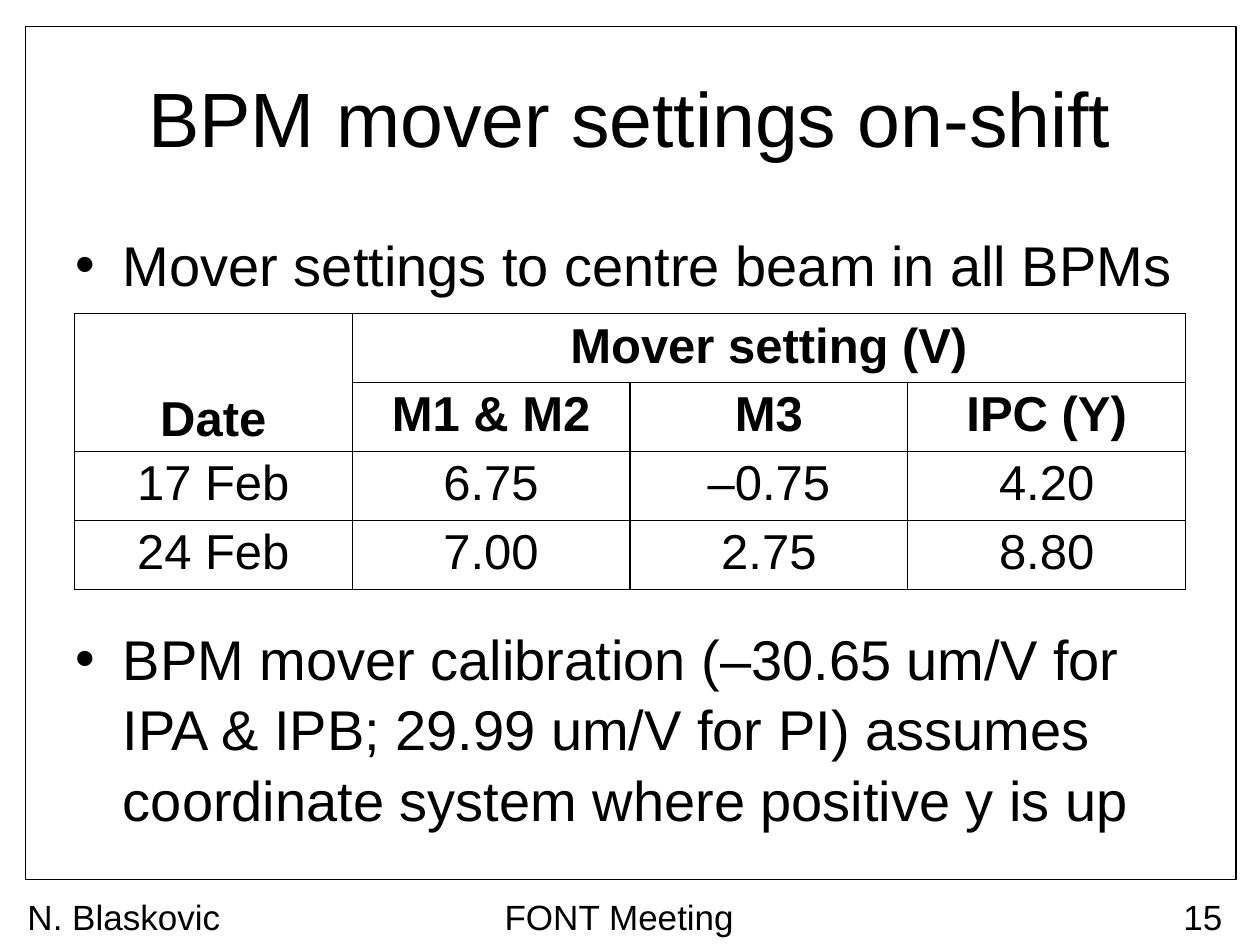
from lxml import etree
from pptx import Presentation
from pptx import util as u
from pptx.dml.color import RGBColor
from pptx.enum import shapes, text
from pptx.oxml.ns import qn

BLACK = "000000"
FONT = "Arial"
ALIGN = text.PP_ALIGN
ANCHOR = text.MSO_ANCHOR


def colour(value):
    return RGBColor.from_string(value)


def style(para, size, align=ALIGN.LEFT, bold=False):
    para.alignment = align
    para.font.name = FONT
    para.font.size = u.Pt(size)
    para.font.bold = bold
    para.font.color.rgb = colour(BLACK)


def place(shape, left, top, width, height):
    shape.left, shape.top = u.Inches(left), u.Inches(top)
    shape.width, shape.height = u.Inches(width), u.Inches(height)


def add_frame(page):
    frame = page.shapes.add_shape(
        shapes.MSO_SHAPE.RECTANGLE,
        u.Inches(0.2), u.Inches(0.21), u.Inches(9.61), u.Inches(6.77))
    frame.shadow.inherit = False
    frame.fill.background()
    frame.line.color.rgb = colour(BLACK)
    frame.line.width = u.Pt(0.75)


def fill_title(title, words):
    place(title, 0.5, 0.3, 9, 1.25)
    title.text_frame.text = words
    title.text_frame.vertical_anchor = ANCHOR.MIDDLE
    style(title.text_frame.paragraphs[0], 44, ALIGN.CENTER)


def fill_bullets(body, items):
    """Each item is its wording and the space above it in points."""
    place(body, 0.5, 1.75, 9.01, 4.95)
    frame = body.text_frame
    frame.auto_size = text.MSO_AUTO_SIZE.NONE
    frame.text = "\n".join(words for words, _ in items)
    for para, (_, gap) in zip(frame.paragraphs, items):
        style(para, 32)
        para.line_spacing = 1.05
        para.space_before = u.Pt(gap)


def add_label(page, words, left, width, align):
    box = page.shapes.add_textbox(
        u.Inches(left), u.Inches(7.06), u.Inches(width), u.Inches(0.32))
    box.text_frame.word_wrap = True
    box.text_frame.text = words
    style(box.text_frame.paragraphs[0], 20, align)


def add_borders(cell):
    properties = cell._tc.get_or_add_tcPr()
    for side in ("a:lnL", "a:lnR", "a:lnT", "a:lnB"):
        line = etree.SubElement(properties, qn(side), w=str(u.Pt(0.75)))
        solid = etree.SubElement(line, qn("a:solidFill"))
        etree.SubElement(solid, qn("a:srgbClr"), val=BLACK)


def add_settings_table(page, rows, header_rows):
    row_height = 0.53
    table = page.shapes.add_table(
        len(rows), len(rows[0]), u.Inches(0.59), u.Inches(2.49),
        u.Inches(8.82), u.Inches(row_height * len(rows))).table
    table.first_row = table.horz_banding = False
    for r, row in enumerate(rows):
        for c, words in enumerate(row):
            cell = table.cell(r, c)
            add_borders(cell)
            cell.fill.background()
            cell.margin_top = cell.margin_bottom = u.Inches(0.04)
            cell.text = words
            style(cell.text_frame.paragraphs[0], 28, ALIGN.CENTER,
                  bold=r < header_rows)
    # Date spans both header rows, the setting heading spans its columns
    table.cell(0, 0).merge(table.cell(1, 0))
    table.cell(0, 0).vertical_anchor = ANCHOR.BOTTOM
    table.cell(0, 1).merge(table.cell(0, 3))


def main():
    deck = Presentation()
    deck.slide_width, deck.slide_height = u.Inches(10), u.Inches(7.5)
    page = deck.slides.add_slide(deck.slide_layouts[1])

    # Frame, title and bullets
    add_frame(page)
    fill_title(page.shapes.title, "BPM mover settings on-shift")
    fill_bullets(page.placeholders[1], [
        ("Mover settings to centre beam in all BPMs", 0),
        ("BPM mover calibration (–30.65 um/V for IPA & IPB; 29.99 um/V "
         "for PI) assumes coordinate system where positive y is up", 185),
    ])

    # Footer
    add_label(page, "FONT Meeting", 1.53, 6.77, ALIGN.CENTER)
    add_label(page, "15", 9.25, 0.55, ALIGN.RIGHT)
    add_label(page, "N. Blaskovic", 0.12, 1.73, ALIGN.LEFT)

    # Mover settings
    add_settings_table(page, [
        ("Date", "Mover setting (V)", "", ""),
        ("", "M1 & M2", "M3", "IPC (Y)"),
        ("17 Feb", "6.75", "–0.75", "4.20"),
        ("24 Feb", "7.00", "2.75", "8.80"),
    ], header_rows=2)

    deck.save("out.pptx")


if __name__ == "__main__":
    main()
